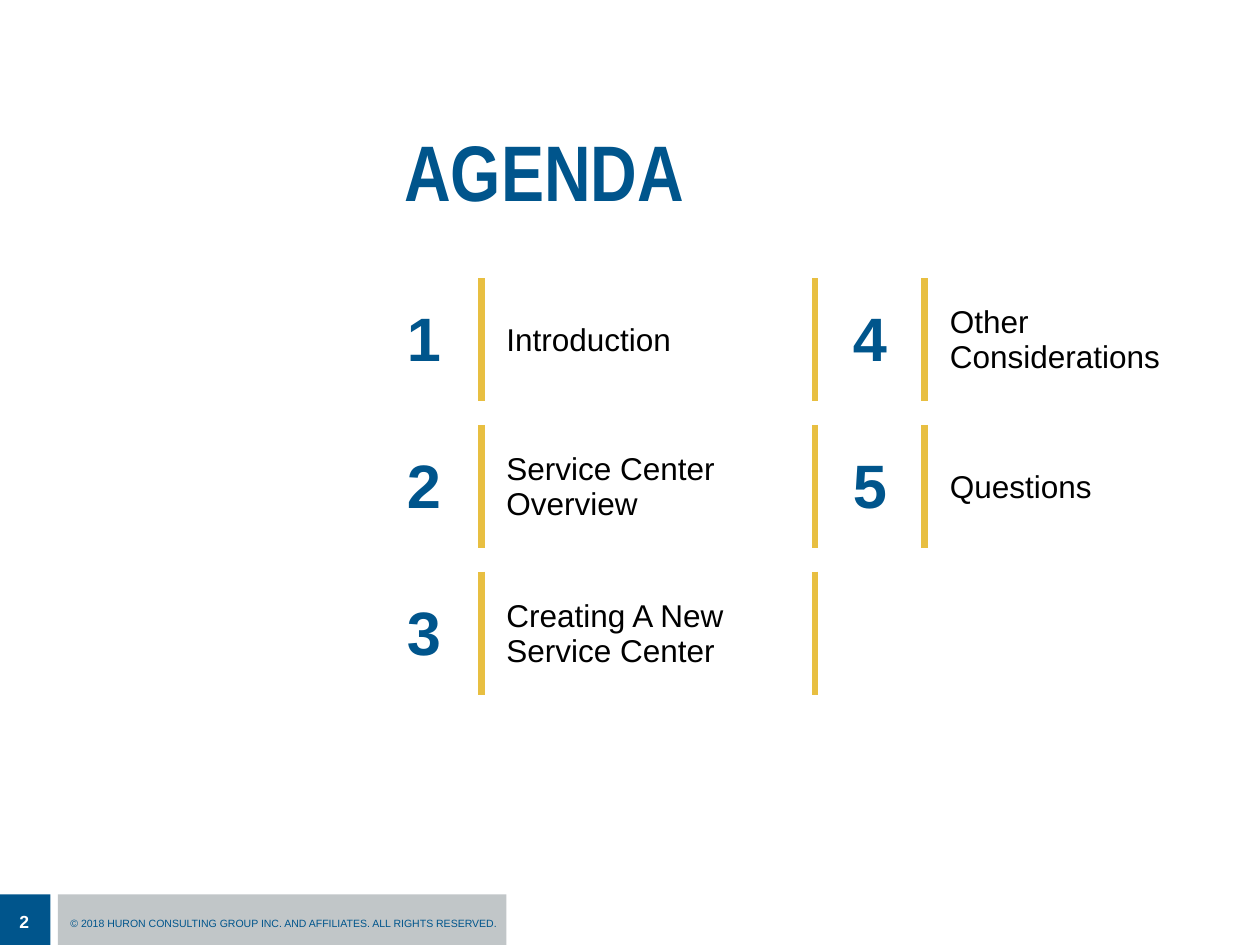
from dataclasses import dataclass

from lxml import etree
from pptx import Presentation
from pptx import util as u
from pptx.dml.color import RGBColor
from pptx.enum import shapes, text
from pptx.oxml import ns


@dataclass(frozen=True)
class Theme:
    blue: str = "00558C"
    gold: str = "E8BF41"
    grey: str = "C1C6C8"
    white: str = "FFFFFF"
    black: str = "000000"
    body_font: str = "Arial"
    title_font: str = "Arial Narrow"
    title_size: float = 45
    number_size: float = 35
    topic_size: float = 18
    page_size: float = 10
    small_size: float = 6
    rule_width: float = 4.5


THEME = Theme()
TOPICS = ["Introduction", "Service Center Overview", "Creating A New Service Center",
          "Other Considerations", "Questions"]
TOPICS_PER_COLUMN = 3
COPYRIGHT = "© 2018 HURON CONSULTING GROUP INC. AND AFFILIATES. ALL RIGHTS RESERVED."


def add_run(para, words, size, color, bold=False, font=THEME.body_font):
    span = para.add_run()
    span.text = words
    span.font.size = u.Pt(size)
    span.font.bold = bold
    span.font.name = font
    span.font.color.rgb = RGBColor.from_string(color)


def set_margins(target, left, top, right, bottom):
    target.margin_left, target.margin_top = u.Cm(left), u.Cm(top)
    target.margin_right, target.margin_bottom = u.Cm(right), u.Cm(bottom)


def add_block(page, left, top, width, height, color):
    block = page.shapes.add_shape(shapes.MSO_SHAPE.RECTANGLE, u.Cm(left), u.Cm(top),
                                  u.Cm(width), u.Cm(height))
    block.shadow.inherit = False
    block.fill.solid()
    block.fill.fore_color.rgb = RGBColor.from_string(color)
    block.line.fill.background()
    return block


def add_footer(page, left, top, height, number):
    add_block(page, left + 1.17, top, 9.04, height, THEME.grey)
    box = page.shapes.add_textbox(u.Cm(left + 1.17), u.Cm(top + 0.33), u.Cm(9.32), u.Cm(0.5))
    box.text_frame.word_wrap = False
    add_run(box.text_frame.paragraphs[0], COPYRIGHT, THEME.small_size, THEME.blue)

    add_block(page, left, top, height, height, THEME.blue)
    box = page.shapes.add_textbox(u.Cm(left + 0.03), u.Cm(top + 0.2), u.Cm(1.02), u.Cm(0.69))
    frame = box.text_frame
    frame.word_wrap = True
    frame.vertical_anchor = text.MSO_ANCHOR.MIDDLE
    set_margins(frame, 0.15, 0.13, 0.25, 0.13)
    frame.paragraphs[0].alignment = text.PP_ALIGN.CENTER
    add_run(frame.paragraphs[0], number, THEME.page_size, THEME.white, bold=True)


def add_panel(page, left, top, width, height):
    """Lay a slightly transparent white panel behind the agenda."""
    panel = add_block(page, left, top, width, height, THEME.white)
    color = panel.element.find(".//" + ns.qn("a:srgbClr"))
    etree.SubElement(color, ns.qn("a:alpha"), val="85000")


def place_title(page, left, top, width, height):
    title = page.shapes.title
    title.element.getparent().append(title.element)  # in front of the panel
    title.left, title.top = u.Cm(left), u.Cm(top)
    title.width, title.height = u.Cm(width), u.Cm(height)
    frame = title.text_frame
    frame.word_wrap = True
    frame.auto_size = text.MSO_AUTO_SIZE.NONE
    frame.vertical_anchor = text.MSO_ANCHOR.MIDDLE
    set_margins(frame, 0.76, 0.76, 0.76, 0.76)
    para = frame.paragraphs[0]
    para.alignment = text.PP_ALIGN.LEFT
    para.line_spacing = u.Pt(40)
    add_run(para, "AGENDA", THEME.title_size, THEME.blue, True, THEME.title_font)


def add_border(cell, side):
    line = etree.Element(ns.qn("a:ln" + side), w=str(u.Pt(THEME.rule_width)))
    fill = etree.SubElement(line, ns.qn("a:solidFill"))
    etree.SubElement(fill, ns.qn("a:srgbClr"), val=THEME.gold)
    cell._tc.get_or_add_tcPr().insert(0, line)


def clear_cell(cell):
    """Remove fill and margins, and keep the empty line low enough for a gap row."""
    cell.fill.background()
    set_margins(cell, 0, 0, 0, 0)
    para = cell.text_frame.paragraphs[0]
    etree.SubElement(para._p, ns.qn("a:endParaRPr"), sz=str(int(THEME.small_size * 100)))


def fill_topic(number_cell, topic_cell, number, topic):
    for cell in (number_cell, topic_cell):
        cell.vertical_anchor = text.MSO_ANCHOR.MIDDLE
    set_margins(number_cell, 0.25, 0.13, 0.25, 0.13)
    set_margins(topic_cell, 0.51, 0.13, 0.51, 0.13)
    para = number_cell.text_frame.paragraphs[0]
    para.alignment = text.PP_ALIGN.CENTER
    add_run(para, str(number), THEME.number_size, THEME.blue, bold=True)
    add_run(topic_cell.text_frame.paragraphs[0], topic, THEME.topic_size, THEME.black)
    add_border(number_cell, "R")
    add_border(topic_cell, "L")


def add_agenda(page, left, top):
    widths = [2.31, 6.73, 2.21, 6.76]
    heights = [2.48, 0.48] * (TOPICS_PER_COLUMN - 1) + [2.48, 0.61]
    holder = page.shapes.add_table(len(heights), len(widths), u.Cm(left), u.Cm(top),
                                   u.Cm(sum(widths)), u.Cm(sum(heights)))
    table = holder.table
    table.first_row = table.horz_banding = False
    for column, width in zip(table.columns, widths):
        column.width = u.Cm(width)
    for row, height in zip(table.rows, heights):
        row.height = u.Cm(height)
    for cell in table.iter_cells():
        clear_cell(cell)
    for index, topic in enumerate(TOPICS):
        pair, line = divmod(index, TOPICS_PER_COLUMN)
        fill_topic(table.cell(2 * line, 2 * pair), table.cell(2 * line, 2 * pair + 1),
                   index + 1, topic)
    for row, column in [(4, 2), (5, 0), (5, 2)]:
        table.cell(row, column).merge(table.cell(row, column + 1))


def main():
    deck = Presentation()
    deck.slide_width, deck.slide_height = u.Cm(25.4), u.Cm(19.05)
    page = deck.slides.add_slide(deck.slide_layouts[5])
    add_footer(page, 0, 18.03, 1.02, "2")
    add_panel(page, 7.39, 1.6, 18.01, 15.65)
    place_title(page, 7.39, 1.6, 17.22, 4.14)
    add_agenda(page, 7.39, 5.62)
    deck.save("out.pptx")


if __name__ == "__main__":
    main()
